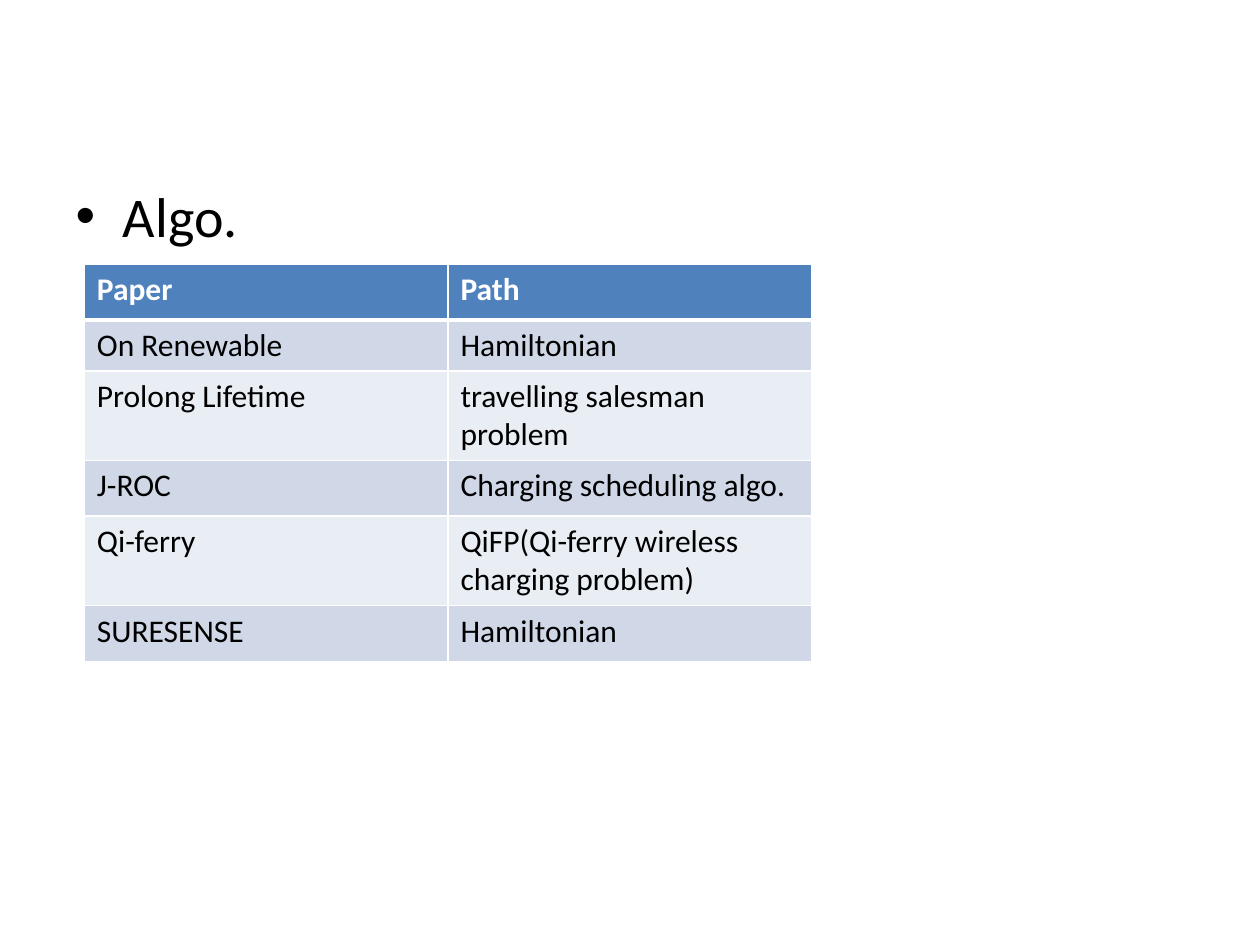
from dataclasses import dataclass

from pptx import Presentation
from pptx import util as u
from pptx.dml.color import RGBColor
from pptx.enum import text
from pptx.oxml import parse_xml
from pptx.oxml.ns import nsdecls


@dataclass(frozen=True)
class Theme:
    font: str = "Calibri"
    body_size: int = 32
    table_size: int = 18
    ink: str = "000000"
    paper: str = "FFFFFF"
    header: str = "4F81BD"
    bands: tuple = ("D0D8E8", "E9EDF4")
    rule: float = 1
    header_rule: float = 3


THEME = Theme()

ROWS = [
    ("Paper", "Path"),
    ("On Renewable", "Hamiltonian"),
    ("Prolong Lifetime", "travelling salesman problem"),
    ("J-ROC", "Charging scheduling algo."),
    ("Qi-ferry", "QiFP(Qi-ferry wireless charging problem)"),
    ("SURESENSE", "Hamiltonian"),
]
ROW_HEIGHTS = (1.12, 0.89, 1.12, 1.12, 1.04, 1.12)  # minimum heights, cm
COLUMN_WIDTH = 7.33


def set_values(target, values):
    for name, value in values.items():
        setattr(target, name, value)


def write_text(frame, words, size, color, bold=False):
    run = frame.paragraphs[0].add_run()
    run.text = words
    set_values(run.font, {"name": THEME.font, "size": u.Pt(size), "bold": bold})
    run.font.color.rgb = RGBColor.from_string(color)


def set_borders(cell, widths):
    """Draw cell edges; widths maps L, R, T, B to points."""
    properties = cell._tc.get_or_add_tcPr()
    for index, (side, width) in enumerate(widths.items()):
        properties.insert(index, parse_xml(
            f'<a:ln{side} {nsdecls("a")} w="{u.Pt(width)}"><a:solidFill>'
            f'<a:srgbClr val="{THEME.paper}"/></a:solidFill></a:ln{side}>'))


def add_bullet(slide, words):
    body = slide.placeholders[1]
    set_values(body, {"left": u.Cm(1.27), "top": u.Cm(3.53),
                      "width": u.Cm(22.86), "height": u.Cm(13.49)})
    body.text_frame.auto_size = text.MSO_AUTO_SIZE.NONE
    write_text(body.text_frame, words, THEME.body_size, THEME.ink)


def fill_cell(cell, words, row):
    is_header = row == 0
    cell.fill.solid()
    fill = THEME.header if is_header else THEME.bands[(row - 1) % 2]
    cell.fill.fore_color.rgb = RGBColor.from_string(fill)
    write_text(cell.text_frame, words, THEME.table_size,
               THEME.paper if is_header else THEME.ink, is_header)
    set_borders(cell, {
        "L": THEME.rule, "R": THEME.rule,
        "T": THEME.header_rule if row == 1 else THEME.rule,
        "B": THEME.header_rule if is_header else THEME.rule})


def add_paper_table(slide):
    columns = len(ROWS[0])
    table = slide.shapes.add_table(
        len(ROWS), columns, u.Cm(1.7), u.Cm(5.33),
        u.Cm(COLUMN_WIDTH * columns), u.Cm(sum(ROW_HEIGHTS))).table
    for column in table.columns:
        column.width = u.Cm(COLUMN_WIDTH)
    for row, (values, height) in enumerate(zip(ROWS, ROW_HEIGHTS)):
        table.rows[row].height = u.Cm(height)
        for column, words in enumerate(values):
            fill_cell(table.cell(row, column), words, row)


def main():
    presentation = Presentation()
    set_values(presentation, {"slide_width": u.Cm(25.4),
                              "slide_height": u.Cm(19.05)})
    slide = presentation.slides.add_slide(presentation.slide_layouts[1])

    # The slide has no title
    title = slide.shapes.title.element
    title.getparent().remove(title)

    # Topic and comparison of papers
    add_bullet(slide, "Algo.")
    add_paper_table(slide)

    presentation.save("out.pptx")


if __name__ == "__main__":
    main()
